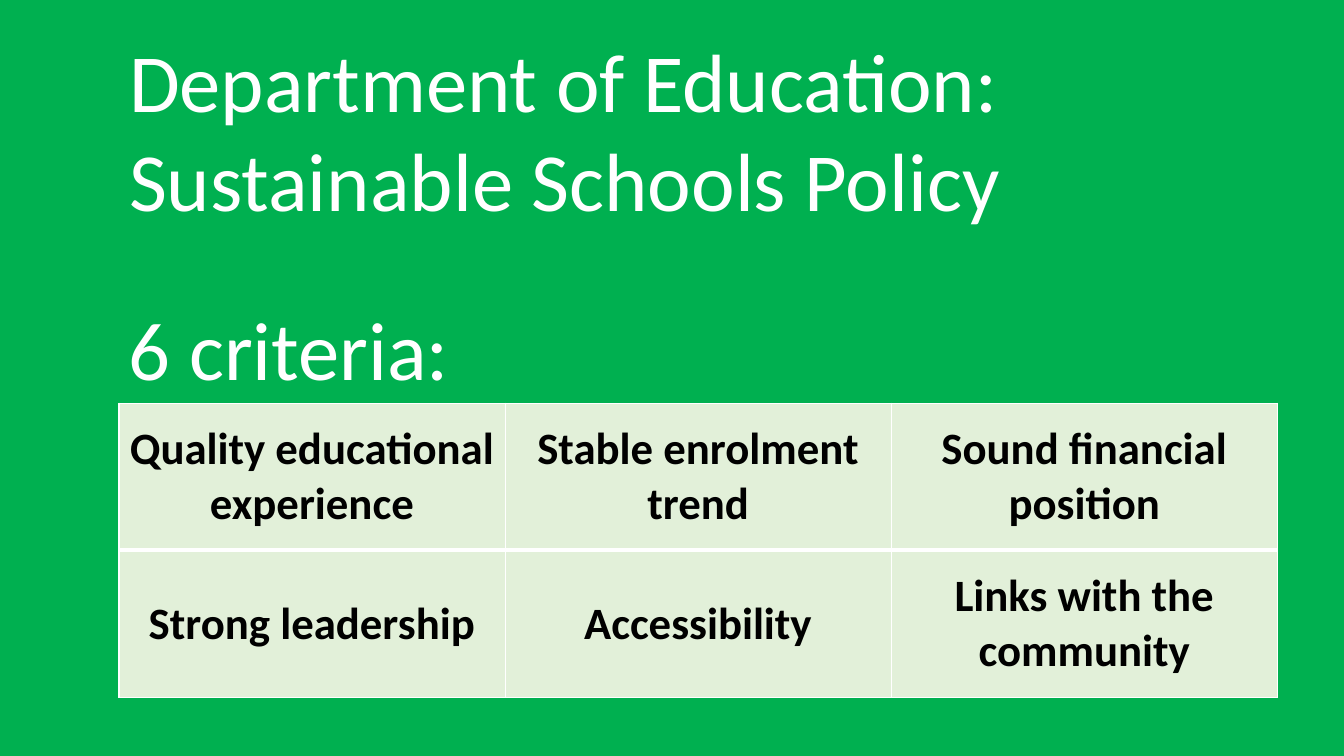
from dataclasses import dataclass

from lxml.etree import SubElement
from pptx import Presentation
from pptx.dml.color import RGBColor
from pptx.enum.text import MSO_ANCHOR, MSO_AUTO_SIZE, PP_ALIGN
from pptx.oxml.ns import qn
from pptx.table import _Cell
from pptx.text.text import TextFrame
from pptx.util import Inches, Pt

GREEN = RGBColor(0x00, 0xB0, 0x50)
PALE_GREEN = RGBColor(0xE2, 0xF0, 0xD9)
WHITE = RGBColor(0xFF, 0xFF, 0xFF)
BLACK = RGBColor(0x00, 0x00, 0x00)

LEFT = Inches(1.18)
COLUMN_WIDTH = Inches(3.83)
ROW_HEIGHT = Inches(1.46)

HEADING_FORMAT = {"name": "Calibri", "size": Pt(59), "bold": False}
CRITERION_FORMAT = {"name": "Calibri", "size": Pt(32), "bold": True}
FRAME_FORMAT = {
    "word_wrap": True,
    "auto_size": MSO_AUTO_SIZE.NONE,
    "vertical_anchor": MSO_ANCHOR.TOP,
}


@dataclass(frozen=True)
class CriteriaRow:
    criteria: tuple[str, ...]
    bottom_border: int


CRITERIA_ROWS = (
    CriteriaRow(
        ("Quality educational experience", "Stable enrolment trend", "Sound financial position"), 3
    ),
    CriteriaRow(("Strong leadership", "Accessibility", "Links with the community"), 1),
)


def apply_format(target: object, values: dict) -> None:
    for attribute, value in values.items():
        setattr(target, attribute, value)


def write_text(
    frame: TextFrame, lines: tuple[str, ...], values: dict, color: RGBColor, alignment: PP_ALIGN
) -> None:
    frame.text = "\n".join(lines)
    for paragraph in frame.paragraphs:
        paragraph.alignment = alignment
        font = paragraph.runs[0].font
        apply_format(font, values)
        font.color.rgb = color


def write_heading(shape: object, top: float, width: float, height: float, *lines: str) -> None:
    apply_format(
        shape,
        {"left": LEFT, "top": Inches(top), "width": Inches(width), "height": Inches(height)},
    )
    apply_format(shape.text_frame, FRAME_FORMAT)
    write_text(shape.text_frame, lines, HEADING_FORMAT, WHITE, PP_ALIGN.LEFT)


def draw_borders(cell: _Cell, bottom_border: int) -> None:
    properties = cell._tc.get_or_add_tcPr()
    widths = {"a:lnL": 1, "a:lnR": 1, "a:lnT": 1, "a:lnB": bottom_border}
    for tag, width in widths.items():
        line = SubElement(properties, qn(tag), w=str(Pt(width)))
        fill = SubElement(line, qn("a:solidFill"))
        SubElement(fill, qn("a:srgbClr"), val=str(WHITE))


def fill_cell(cell: _Cell, criterion: str, bottom_border: int) -> None:
    write_text(cell.text_frame, (criterion,), CRITERION_FORMAT, BLACK, PP_ALIGN.CENTER)
    cell.vertical_anchor = MSO_ANCHOR.MIDDLE
    draw_borders(cell, bottom_border)
    cell.fill.solid()
    cell.fill.fore_color.rgb = PALE_GREEN


def add_criteria_table(slide: object) -> None:
    row_count, column_count = len(CRITERIA_ROWS), len(CRITERIA_ROWS[0].criteria)
    table = slide.shapes.add_table(
        row_count,
        column_count,
        LEFT,
        Inches(4),
        COLUMN_WIDTH * column_count,
        ROW_HEIGHT * row_count,
    ).table
    apply_format(table, {"first_row": False, "horz_banding": False})
    for row_index, row in enumerate(CRITERIA_ROWS):
        for column_index, criterion in enumerate(row.criteria):
            fill_cell(table.cell(row_index, column_index), criterion, row.bottom_border)


def main() -> None:
    presentation = Presentation()
    presentation.slide_width = Inches(13.33)
    presentation.slide_height = Inches(7.5)
    slide = presentation.slides.add_slide(presentation.slide_layouts.get_by_name("Title Only"))
    slide.background.fill.solid()
    slide.background.fill.fore_color.rgb = GREEN

    write_heading(
        slide.shapes.title, 0.25, 10.97, 2.09,
        "Department of Education:", "Sustainable Schools Policy",
    )
    criteria_heading = slide.shapes.add_textbox(0, 0, 0, 0)
    write_heading(criteria_heading, 2.91, 3.53, 1.09, "6 criteria:")
    add_criteria_table(slide)
    presentation.save("out.pptx")


if __name__ == "__main__":
    main()
